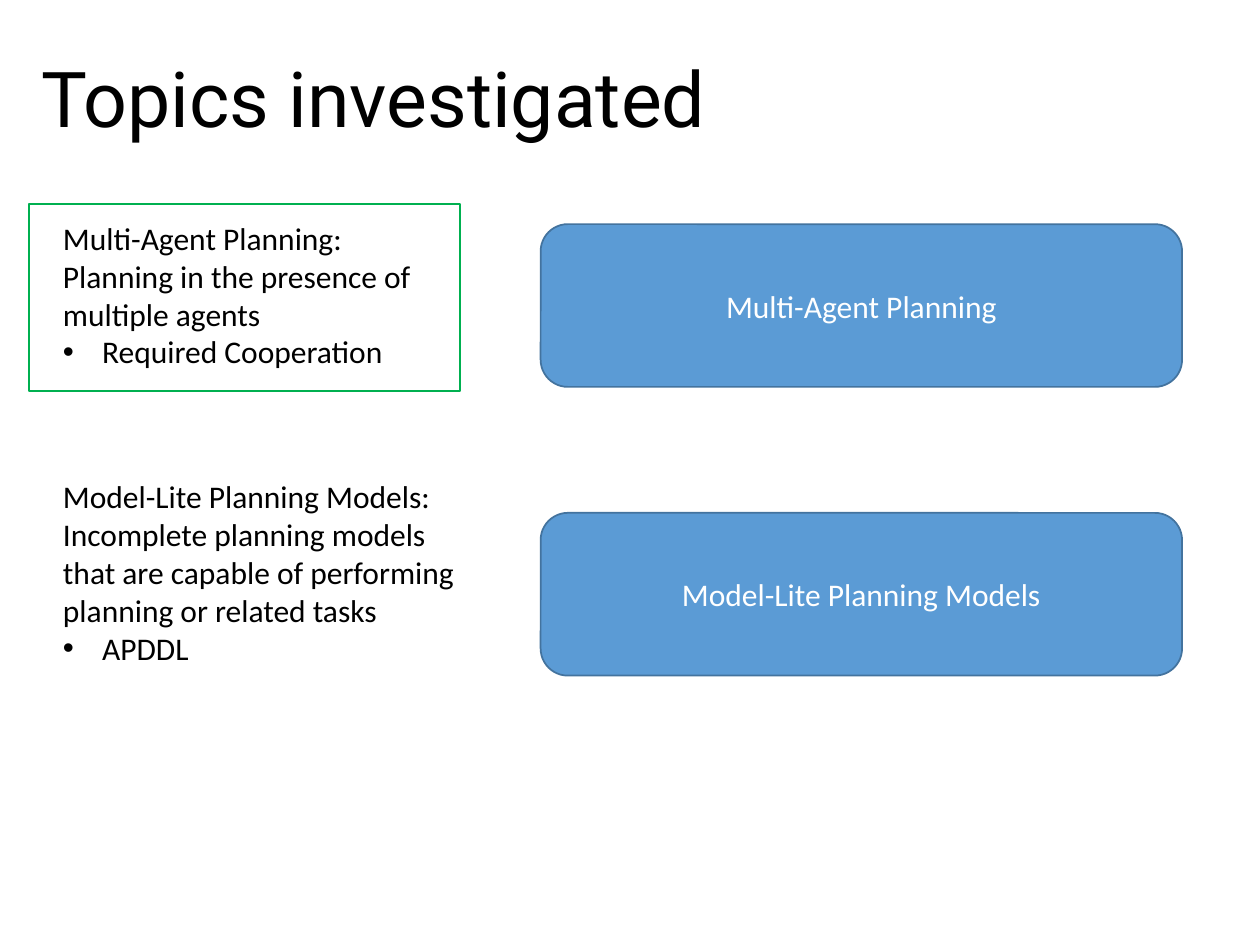
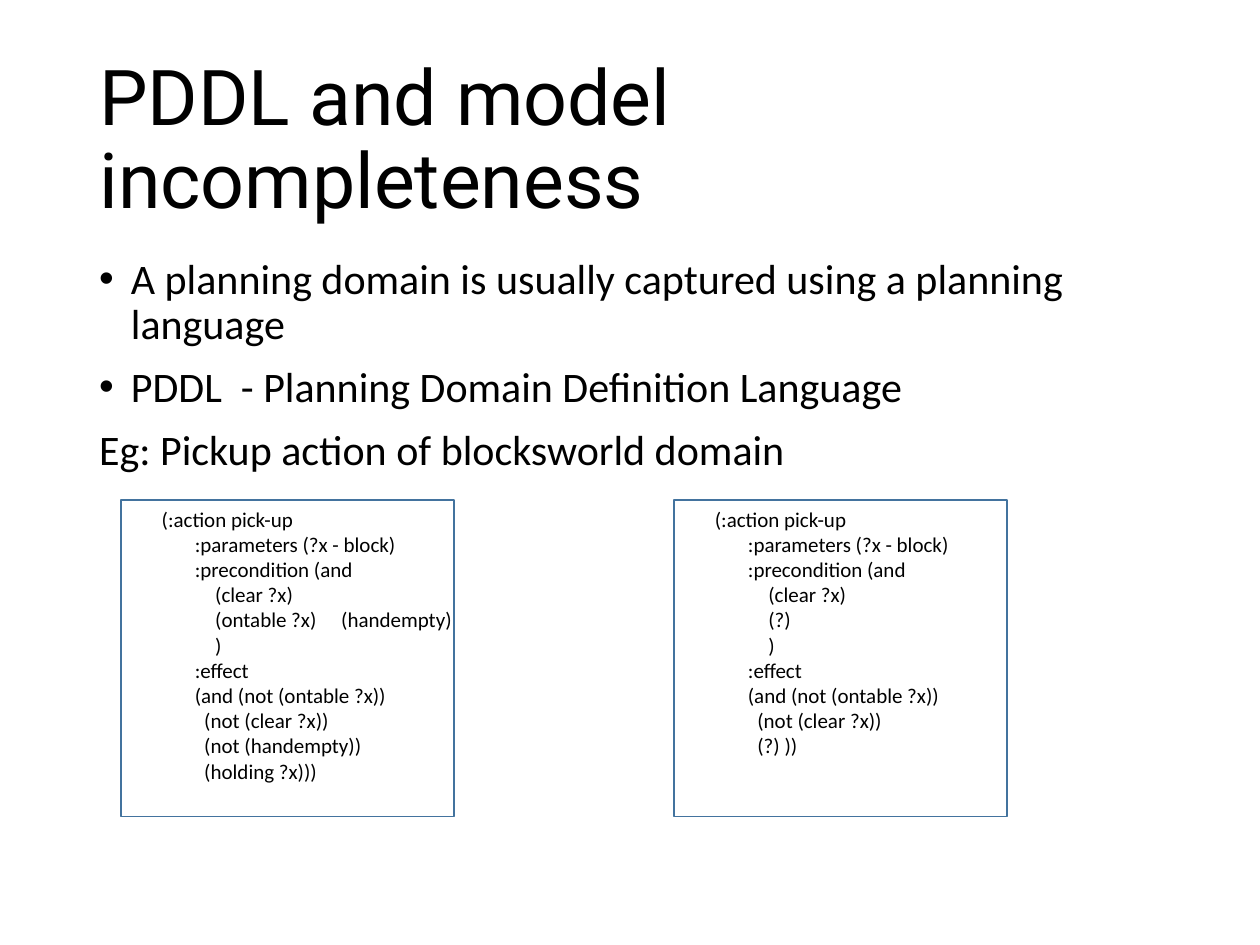
from pptx import Presentation
from pptx.dml.color import RGBColor
from pptx.enum.shapes import MSO_SHAPE
from pptx.enum.text import MSO_ANCHOR, MSO_AUTO_SIZE, PP_ALIGN
from pptx.util import Cm, Pt
from lxml.etree import SubElement
from pptx.oxml.ns import qn

COLORS = {"text": "000000", "white": "FFFFFF", "blue": "5B9BD5",
          "outline": "43739E", "green": "00B050"}
TITLE = {"name": "Roboto", "size": Pt(44)}
BODY = {"name": "Calibri", "size": Pt(24)}
LABEL = {"name": "Calibri", "size": Pt(18)}
CODE = {"name": "Calibri", "size": Pt(12)}


def write(sp, lines, fmt, color="text", anchor=MSO_ANCHOR.TOP, indent=0, **para):
    """Fill a shape with one paragraph per line; a leading • becomes a bullet."""
    tf = sp.text_frame
    tf.word_wrap = True
    tf.auto_size = MSO_AUTO_SIZE.NONE
    tf.vertical_anchor = anchor
    for i, line in enumerate(lines):
        p = tf.paragraphs[0] if i == 0 else tf.add_paragraph()
        for key, value in ({"alignment": PP_ALIGN.LEFT} | para).items():
            if key != "space_before" or i > 0:
                setattr(p, key, value)
        if line.startswith("•"):
            pPr = p._p.get_or_add_pPr()
            pPr.set("marL", str(Cm(indent)))
            pPr.set("indent", str(-Cm(indent)))
            SubElement(pPr, qn("a:buFont")).set("typeface", "Arial")
            SubElement(pPr, qn("a:buChar")).set("char", "•")
        r = p.add_run()
        r.text = line.removeprefix("•")
        for key, value in fmt.items():
            setattr(r.font, key, value)
        r.font.color.rgb = RGBColor.from_string(COLORS[color])


def add_box(s, kind, left, top, width, height, line, fill=None):
    sp = s.shapes.add_shape(kind, Cm(left), Cm(top), Cm(width), Cm(height))
    sp.shadow.inherit = False
    sp.line.color.rgb = RGBColor.from_string(COLORS[line])
    sp.line.width = Pt(1)
    if fill:
        sp.fill.solid()
        sp.fill.fore_color.rgb = RGBColor.from_string(COLORS[fill])
    else:
        sp.fill.background()
    return sp


prs = Presentation()
prs.slide_width, prs.slide_height = Cm(25.4), Cm(19.05)

# Titles
slides = []
for title, left, top, width, height in [
    ("Topics investigated", 0.58, 0.36, 23.98, 3.43),
    ("PDDL and model incompleteness", 1.75, 1.02, 21.9, 3.68),
]:
    s = prs.slides.add_slide(prs.slide_layouts[5])
    sp = s.shapes.title
    sp.left, sp.top, sp.width, sp.height = Cm(left), Cm(top), Cm(width), Cm(height)
    write(sp, [title], TITLE, anchor=MSO_ANCHOR.MIDDLE, line_spacing=0.9)
    slides.append(s)
topics, pddl = slides

# Topics: description on the left, label on the right
for name, about, example, text_top, label_top in [
    ("Model-Lite Planning Models",
     "Incomplete planning models that are capable of performing planning or related tasks",
     "APDDL", 9.5, 10.34),
    ("Multi-Agent Planning", "Planning in the presence of multiple agents",
     "Required Cooperation", 4.29, 4.52),
]:
    sp = add_box(topics, MSO_SHAPE.ROUNDED_RECTANGLE, 10.9, label_top, 12.93, 3.28,
                 "outline", "blue")
    write(sp, [name], LABEL, "white", MSO_ANCHOR.MIDDLE, alignment=PP_ALIGN.CENTER)
    sp = topics.shapes.add_textbox(Cm(1.02), Cm(text_top), Cm(8.59), Cm(4.11))
    write(sp, [f"{name}:", about, f"•{example}"], LABEL, indent=0.79)
add_box(topics, MSO_SHAPE.RECTANGLE, 0.58, 4.11, 8.69, 3.78, "green")

# PDDL: statements above a complete and an incomplete action
sp = pddl.shapes.add_textbox(Cm(1.75), Cm(5.08), Cm(21.9), Cm(4.9))
write(sp, ["•A planning domain is usually captured using a planning language",
           "•PDDL  - Planning Domain Definition Language",
           "Eg: Pickup action of blocksworld domain"],
      BODY, indent=0.64, line_spacing=0.9, space_before=Pt(10))

action_start = ["  (:action pick-up",
                "         :parameters (?x - block)",
                "         :precondition (and",
                "\t(clear ?x)"]
effect_start = ["\t)",
                "         :effect",
                "         (and (not (ontable ?x))",
                "           (not (clear ?x))"]
for left, precondition, effect in [
    (2.44, ["\t(ontable ?x) \t(handempty)"],
     ["           (not (handempty))", "           (holding ?x)))"]),
    (13.59, ["\t(?)"], ["           (?) ))"]),
]:
    sp = pddl.shapes.add_textbox(Cm(left + 0.38), Cm(10.08), Cm(6.76), Cm(6.4))
    write(sp, action_start + precondition + effect_start + effect, CODE)
    add_box(pddl, MSO_SHAPE.RECTANGLE, left, 10.08, 6.71, 6.38, "outline")

prs.save("out.pptx")
